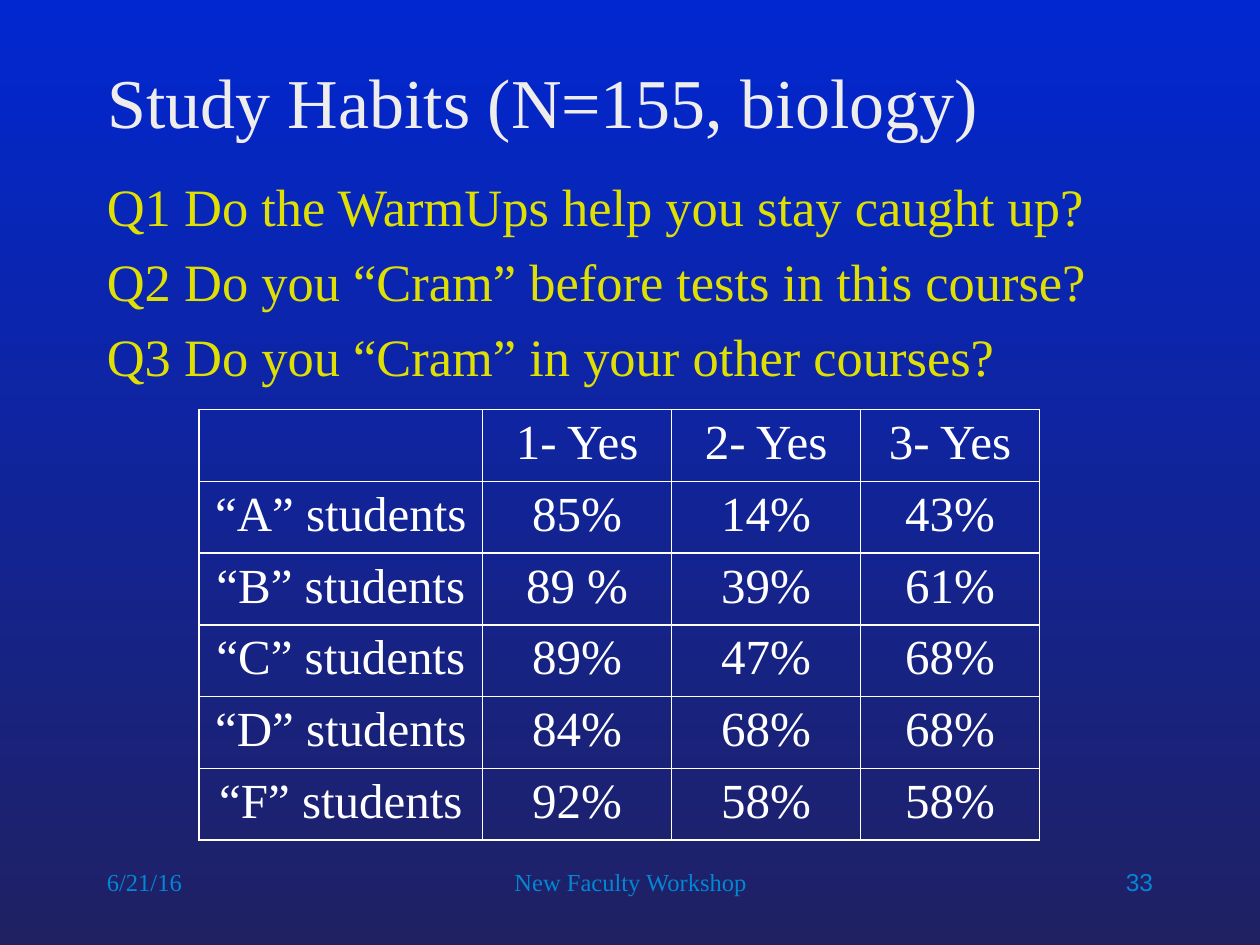
from lxml.etree import SubElement
from pptx import Presentation
from pptx.dml.color import RGBColor
from pptx.enum.text import MSO_ANCHOR, PP_ALIGN as Align
from pptx.oxml import parse_xml
from pptx.oxml.ns import nsdecls
from pptx.util import Inches, Pt

SKY = RGBColor(0x01, 0x27, 0xD0)
NIGHT = RGBColor(0x20, 0x21, 0x63)
IVORY = RGBColor(0xEE, 0xED, 0xEB)
YELLOW = RGBColor(0xE0, 0xDF, 0x02)
WHITE = RGBColor(0xFF, 0xFF, 0xFF)
FOOTER_BLUE = RGBColor(0x03, 0x86, 0xD3)
SERIF = "Times New Roman"

QUESTIONS = [
    "Q1 Do the WarmUps help you stay caught up?",
    "Q2 Do you “Cram” before tests in this course?",
    "Q3 Do you “Cram” in your other courses?",
]
ANSWERS = [
    ["", "1- Yes", "2- Yes", "3- Yes"],
    ["“A” students", "85%", "14%", "43%"],
    ["“B” students", "89 %", "39%", "61%"],
    ["“C” students", "89%", "47%", "68%"],
    ["“D” students", "84%", "68%", "68%"],
    ["“F” students", "92%", "58%", "58%"],
]
COLUMN_WIDTHS = [2.25, 1.5, 1.5, 1.42]
ROW_HEIGHT = 0.57


def write_text(frame, lines, *, size, color, font=SERIF, align=Align.LEFT, before=0):
    for index, line in enumerate(lines):
        paragraph = frame.add_paragraph() if index else frame.paragraphs[0]
        paragraph.alignment = align
        paragraph.space_before = Pt(before)
        run = paragraph.add_run()
        run.text = line
        run.font.name = font
        run.font.size = Pt(size)
        run.font.color.rgb = color


def add_text(slide, box, lines, **text_format):
    frame = slide.shapes.add_textbox(*map(Inches, box)).text_frame
    frame.word_wrap = True
    write_text(frame, lines, **text_format)


def paint_background(slide):
    fill = slide.background.fill
    fill.gradient()
    fill.gradient_angle = 270
    for stop, color in zip(fill.gradient_stops, (SKY, NIGHT)):
        stop.color.rgb = color


def set_title(slide, text):
    title = slide.shapes.title
    title.left, title.top = Inches(0.75), Inches(0.42)
    title.width, title.height = Inches(8.5), Inches(0.75)
    title.text_frame.vertical_anchor = MSO_ANCHOR.MIDDLE
    write_text(title.text_frame, [text], size=40, color=IVORY)


def outline_cell(cell):
    """Draw a white line on all four sides; borders must precede the fill."""
    properties = cell._tc.get_or_add_tcPr()
    for position, side in enumerate(("lnL", "lnR", "lnT", "lnB")):
        border = parse_xml(f'<a:{side} {nsdecls("a")} w="{Pt(1)}"><a:solidFill/></a:{side}>')
        SubElement(border[0], border[0].tag.replace("solidFill", "srgbClr"), val=str(WHITE))
        properties.insert(position, border)


def add_answer_table(slide):
    table = slide.shapes.add_table(
        len(ANSWERS), len(COLUMN_WIDTHS), Inches(1.58), Inches(3.25),
        Inches(sum(COLUMN_WIDTHS)), Inches(ROW_HEIGHT * len(ANSWERS))).table
    table.first_row = table.horz_banding = False
    for column, width in zip(table.columns, COLUMN_WIDTHS):
        column.width = Inches(width)
    for row, answers in zip(table.rows, ANSWERS):
        row.height = Inches(ROW_HEIGHT)
        for cell, answer in zip(row.cells, answers):
            cell.fill.background()
            outline_cell(cell)
            if answer:
                write_text(cell.text_frame, [answer], size=28, color=WHITE,
                           align=Align.CENTER)


def add_footer(slide):
    small = {"size": 14, "color": FOOTER_BLUE}
    add_text(slide, (0.75, 6.83, 2.08, 0.5), ["6/21/16"], **small)
    add_text(slide, (3.42, 6.83, 3.17, 0.5), ["New Faculty Workshop"],
             align=Align.CENTER, **small)
    add_text(slide, (8.67, 6.83, 0.58, 0.33), ["33"], font="Arial",
             align=Align.RIGHT, **small)


def main():
    deck = Presentation()
    deck.slide_width, deck.slide_height = Inches(10), Inches(7.5)
    slide = deck.slides.add_slide(deck.slide_layouts[5])
    paint_background(slide)
    set_title(slide, "Study Habits (N=155, biology)")
    add_text(slide, (0.75, 1.33, 8.5, 1.83), QUESTIONS, size=30, color=YELLOW, before=7)
    add_answer_table(slide)
    add_footer(slide)
    deck.save("out.pptx")


if __name__ == "__main__":
    main()
